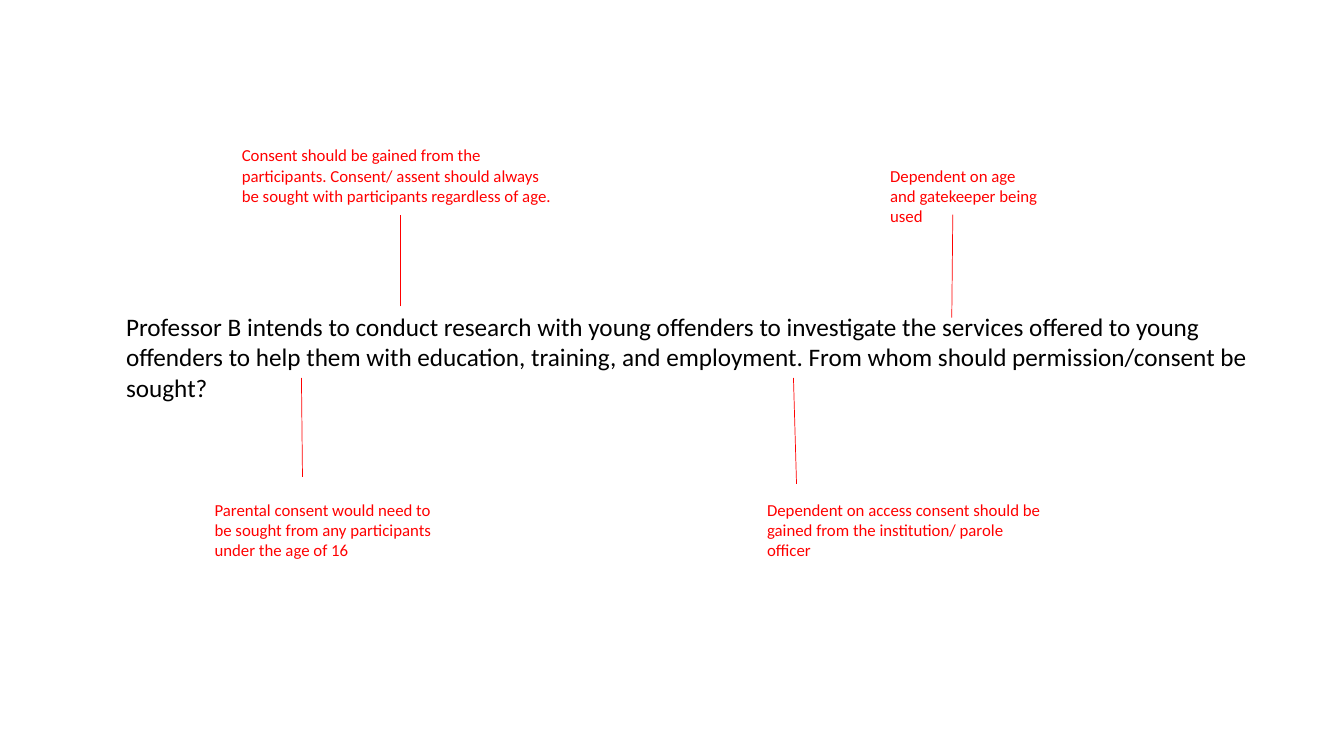
import pptx
import pptx.dml.color
import pptx.enum.shapes
import pptx.enum.text
import pptx.oxml
import pptx.util

PX = 9144
FONT = "Calibri"
BLACK = pptx.dml.color.RGBColor(0x00, 0x00, 0x00)
RED = pptx.dml.color.RGBColor(0xFF, 0x00, 0x00)

QUESTION = (
    "Professor B intends to conduct research with young offenders to investigate "
    "the services offered to young offenders to help them with education, training, "
    "and employment. From whom should permission/consent be sought?"
)
QUESTION_BOX = (90, 304, 1165, 101)
QUESTION_INDENT = 25
INSET = 10
ANSWER_HEIGHT = 71

ANSWERS = [
    ("Dependent on age and gatekeeper being used",
     (873, 159, 172), (944, 315), (945, 213)),
    ("Parental consent would need to be sought from any participants under the age of 16",
     (203, 491, 254), (299, 375), (300, 473)),
    ("Dependent on access consent should be gained from the institution/ parole officer",
     (751, 491, 294), (787, 375), (790, 480)),
    ("Consent should be gained from the participants. Consent/ assent should always "
     "be sought with participants regardless of age.",
     (230, 139, 334), (397, 304), (397, 213)),
]


def px(*lengths):
    """Turn pixel lengths into EMU."""
    return [pptx.util.Emu(length * PX) for length in lengths]


def add_text(page, box, text, size, color, indent=0):
    """Place a wrapped text box with one paragraph."""
    shape = page.shapes.add_textbox(*px(*box))
    frame = shape.text_frame
    frame.word_wrap = True
    frame.auto_size = pptx.enum.text.MSO_AUTO_SIZE.SHAPE_TO_FIT_TEXT
    frame.margin_left = px(INSET + indent)[0]
    frame.text = text
    font = frame.paragraphs[0].runs[0].font
    font.name = FONT
    font.size = pptx.util.Pt(size)
    font.color.rgb = color


def add_answer(page, text, box, start, end):
    """Place a red answer and the line that leads to it from the question."""
    line = page.shapes.add_connector(
        pptx.enum.shapes.MSO_CONNECTOR.STRAIGHT, *px(*start, *end))
    line.line.color.rgb = RED
    line.line.width = pptx.util.Pt(0.5)
    line._element.spPr.append(pptx.oxml.parse_xml(
        '<a:effectLst xmlns:a="http://schemas.openxmlformats.org/drawingml/2006/main"/>'))
    add_text(page, (*box, ANSWER_HEIGHT), text, 12, RED)


def main():
    """Build the consent slide and save it."""
    deck = pptx.Presentation()
    deck.slide_width, deck.slide_height = px(1333, 750)
    page = deck.slides.add_slide(deck.slide_layouts.get_by_name("Blank"))
    add_text(page, QUESTION_BOX, QUESTION, 18, BLACK, QUESTION_INDENT)
    for answer in ANSWERS:
        add_answer(page, *answer)
    deck.save("out.pptx")


if __name__ == "__main__":
    main()
